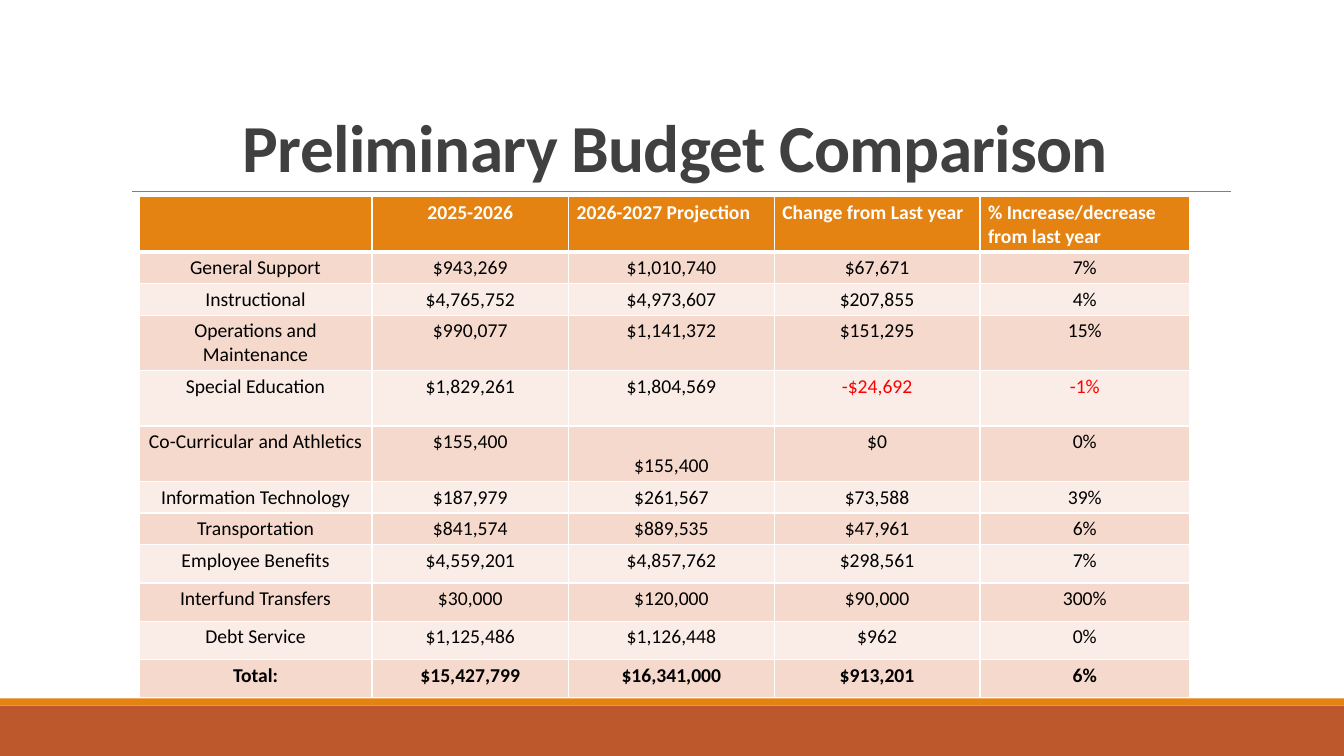
from lxml import etree
from pptx import Presentation
from pptx.dml.color import RGBColor
from pptx.enum.shapes import MSO_CONNECTOR as Connector, MSO_SHAPE as Shape
from pptx.enum.text import MSO_ANCHOR as Anchor, PP_ALIGN as Align
from pptx.oxml.ns import qn
from pptx.util import Inches, Pt

WHITE = RGBColor(0xFF, 0xFF, 0xFF)
BLACK = RGBColor(0x00, 0x00, 0x00)
RED = RGBColor(0xFF, 0x00, 0x00)
GRAY = RGBColor(0x80, 0x80, 0x80)
CHARCOAL = RGBColor(0x40, 0x40, 0x40)
ORANGE = RGBColor(0xE4, 0x83, 0x12)
RUST = RGBColor(0xBD, 0x58, 0x2C)
PEACH = RGBColor(0xF5, 0xD9, 0xCC)
BLUSH = RGBColor(0xFA, 0xED, 0xE7)

HEADINGS = ("", "2025-2026", "2026-2027 Projection", "Change from Last year",
            "% Increase/decrease from last year")
BUDGET = (
    ("General Support", "$943,269", "$1,010,740", "$67,671", "7%"),
    ("Instructional", "$4,765,752", "$4,973,607", "$207,855", "4%"),
    ("Operations and Maintenance", "$990,077", "$1,141,372", "$151,295", "15%"),
    ("Special Education", "$1,829,261", "$1,804,569", "-$24,692", "-1%"),
    ("Co-Curricular and Athletics", "$155,400", "$155,400", "$0", "0%"),
    ("Information Technology", "$187,979", "$261,567", "$73,588", "39%"),
    ("Transportation", "$841,574", "$889,535", "$47,961", "6%"),
    ("Employee Benefits", "$4,559,201", "$4,857,762", "$298,561", "7%"),
    ("Interfund Transfers", "$30,000", "$120,000", "$90,000", "300%"),
    ("Debt Service", "$1,125,486", "$1,126,448", "$962", "0%"),
    ("Total:", "$15,427,799", "$16,341,000", "$913,201", "6%"),
)
COLUMN_WIDTHS = (2.31, 1.95, 2.04, 2.04, 2.08)
SINGLE, ROOMY, DOUBLE = 0.31, 0.38, 0.55
ROW_HEIGHTS = ([DOUBLE] + [SINGLE] * 2 + [DOUBLE] * 3
               + [SINGLE] * 2 + [ROOMY] * 4)


class BudgetSlide:
    """Draw the elements of one slide in a shared style."""

    font_name = "Calibri"

    def __init__(self, slide):
        self.shapes = slide.shapes

    def style(self, font, size, color, bold):
        font.name = self.font_name
        font.size = Pt(size)
        font.color.rgb = color
        font.bold = bold

    def band(self, top, height, color):
        band = self.shapes.add_shape(Shape.RECTANGLE, 0, Inches(top),
                                     Inches(13.33), Inches(height))
        band.shadow.inherit = False
        band.fill.solid()
        band.fill.fore_color.rgb = color
        band.line.fill.background()

    def rule(self, left, right, y):
        rule = self.shapes.add_connector(Connector.STRAIGHT, Inches(left), Inches(y),
                                         Inches(right), Inches(y))
        rule.line.color.rgb = GRAY
        rule.line.width = Pt(0.5)
        etree.SubElement(rule._element.spPr, qn("a:effectLst"))

    def title(self, text, left, top, width, height):
        frame = self.shapes.add_textbox(Inches(left), Inches(top), Inches(width),
                                        Inches(height)).text_frame
        frame.word_wrap = True
        frame.vertical_anchor = Anchor.BOTTOM
        frame.text = text
        heading = frame.paragraphs[0]
        heading.alignment = Align.CENTER
        heading.line_spacing = 0.85
        run = heading.runs[0]
        self.style(run.font, 48, CHARCOAL, True)
        run.font._element.set("spc", "-50")

    def borders(self, cell, top, bottom):
        properties = cell._tc.get_or_add_tcPr()
        sides = (("L", 1), ("R", 1), ("T", top), ("B", bottom))
        for position, (side, width) in enumerate(sides):
            line = etree.Element(qn(f"a:ln{side}"), w=str(Pt(width)))
            fill = etree.SubElement(line, qn("a:solidFill"))
            etree.SubElement(fill, qn("a:srgbClr"), val=str(WHITE))
            properties.insert(position, line)

    def cell(self, cell, text, fill, color, bold, align):
        cell.fill.solid()
        cell.fill.fore_color.rgb = fill
        cell.margin_left = cell.margin_right = Inches(0.08)
        cell.margin_top = cell.margin_bottom = Inches(0.04)
        cell.text = text
        paragraph = cell.text_frame.paragraphs[0]
        paragraph.alignment = align
        self.style(paragraph.font, 14, color, bold)
        for run in paragraph.runs:
            self.style(run.font, 14, color, bold)

    def table(self, left, top, headings, records):
        rows = (headings, *records)
        table = self.shapes.add_table(
            len(rows), len(headings), Inches(left), Inches(top),
            Inches(sum(COLUMN_WIDTHS)), Inches(sum(ROW_HEIGHTS))).table
        table.horz_banding = False
        for column, width in zip(table.columns, COLUMN_WIDTHS):
            column.width = Inches(width)
        for r, (row, values) in enumerate(zip(table.rows, rows)):
            row.height = Inches(ROW_HEIGHTS[r])
            is_header = r == 0
            is_total = r == len(rows) - 1
            fill = ORANGE if is_header else PEACH if r % 2 else BLUSH
            for c, (cell, text) in enumerate(zip(row.cells, values)):
                color = WHITE if is_header else RED if text.startswith("-") else BLACK
                align = Align.LEFT if is_header and c > 1 else Align.CENTER
                self.cell(cell, text, fill, color, is_header or is_total, align)
                self.borders(cell, 3 if r == 1 else 1, 3 if is_header else 1)
        return table


def main():
    presentation = Presentation()
    presentation.slide_width = Inches(13.33)
    presentation.slide_height = Inches(7.5)
    page = BudgetSlide(presentation.slides.add_slide(presentation.slide_layouts[6]))
    page.band(7, 0.5, RUST)
    page.band(6.93, 0.07, ORANGE)
    page.rule(1.31, 12.21, 1.9)
    page.title("Preliminary Budget Comparison", 1.2, 0.31, 11, 1.59)
    comparison = page.table(1.38, 1.95, HEADINGS, BUDGET)
    athletics_projection = comparison.cell(5, 2)
    athletics_projection.vertical_anchor = Anchor.BOTTOM
    presentation.save("out.pptx")


if __name__ == "__main__":
    main()
